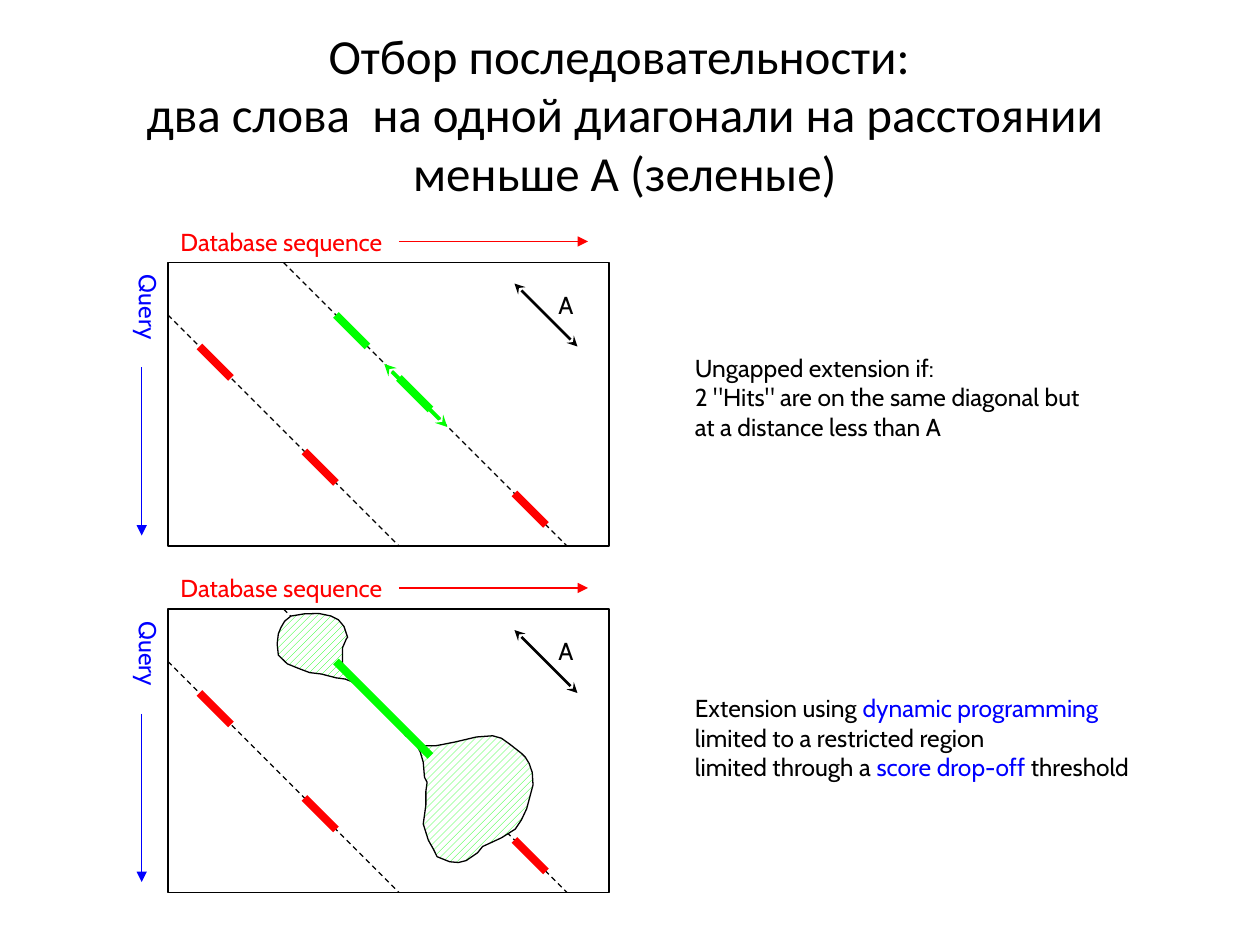
from lxml.etree import SubElement
from pptx import Presentation
from pptx.dml.color import RGBColor
from pptx.enum.dml import MSO_LINE, MSO_PATTERN
from pptx.enum.shapes import MSO_CONNECTOR, MSO_SHAPE
from pptx.enum.text import MSO_ANCHOR, MSO_AUTO_SIZE, PP_ALIGN
from pptx.oxml.ns import qn
from pptx.util import Pt

BLACK = RGBColor(0x00, 0x00, 0x00)
WHITE = RGBColor(0xFF, 0xFF, 0xFF)
RED = RGBColor(0xFF, 0x00, 0x00)
GREEN = RGBColor(0x00, 0xFF, 0x00)
BLUE = RGBColor(0x00, 0x00, 0xFF)

PANEL_LEFT, PANEL_WIDTH, PANEL_HEIGHT = 96, 252, 162
UPPER_TOP, LOWER_TOP = 150, 348
HIT = 18

EXTENSION_REGION = [
    (207.4, 393.1), (200.9, 387.4), (198.7, 383.8), (195.8, 380.2), (195.8, 370.1),
    (198, 365), (198.7, 364.3), (196.6, 358), (193.4, 354.2), (189, 352),
    (182.2, 350.6), (174, 350.8), (166.3, 352.1), (162.7, 355), (160.6, 358.6),
    (159.1, 362.2), (158.4, 368), (159.1, 374.4), (164.2, 379.4), (171.4, 382.3),
    (177, 384.4), (183.6, 385.2), (192.2, 387.4), (197.3, 388.1), (200.9, 389.5),
    (203, 391), (207.4, 395.3), (211, 397.4), (216, 401.8), (218.9, 406.1),
    (223.2, 410.4), (228.2, 414.7), (234.7, 421.9), (237.6, 424.8), (240.2, 429.8),
    (241.9, 435.6), (242.6, 444.2), (244.1, 447.1), (243.4, 452.2), (243.4, 460.1),
    (241.9, 470.9), (244.8, 480.2), (247.7, 485.3), (249.8, 489.6), (257, 492.5),
    (262, 492.9), (266.4, 491.8), (272.9, 487.4), (275.8, 483.8), (286.6, 478.8),
    (294.5, 473.8), (298, 468.5), (301, 462.2), (304.6, 448.6), (304.2, 441.5),
    (302.4, 436.3), (300.2, 432.7), (298.1, 430.6), (291.6, 425.5), (286.6, 421.9),
    (281.5, 420.5), (272.2, 421.2), (259.9, 424.1), (252.7, 425.5), (249.1, 426.2),
    (241.2, 426.2), (237.6, 424.8), (234.7, 421.9), (231.8, 420.5), (226.1, 411.8),
    (221, 407.5), (218.2, 403.9), (212.4, 398.2), (208.8, 395.3),
]


class Board:
    font = "Cabin"
    size = 14

    def __init__(self, slide):
        self.slide = slide
        self.shapes = slide.shapes

    def title(self, lines, left, top, width, height):
        frame = self.shapes.add_textbox(Pt(left), Pt(top), Pt(width), Pt(height)).text_frame
        frame.word_wrap = True
        frame.vertical_anchor = MSO_ANCHOR.MIDDLE
        paragraph = frame.paragraphs[0]
        paragraph.alignment = PP_ALIGN.CENTER
        for index, line in enumerate(lines):
            if index:
                paragraph.add_line_break()
            self.run(paragraph, line, BLACK, "Calibri", 28)

    def run(self, paragraph, words, color, font=font, size=size):
        run = paragraph.add_run()
        run.text = words
        run.font.name = font
        run.font.size = Pt(size)
        run.font.color.rgb = color

    def text(self, paragraphs, left, top, width, height, wrap=False, vertical=False):
        frame = self.shapes.add_textbox(Pt(left), Pt(top), Pt(width), Pt(height)).text_frame
        frame.word_wrap = wrap
        frame.auto_size = MSO_AUTO_SIZE.SHAPE_TO_FIT_TEXT
        if vertical:
            frame._txBody.find(qn("a:bodyPr")).set("vert", "eaVert")
        for index, runs in enumerate(paragraphs):
            paragraph = frame.add_paragraph() if index else frame.paragraphs[0]
            for words, color in runs:
                self.run(paragraph, words, color)

    def box(self, left, top, width, height):
        box = self.shapes.add_shape(MSO_SHAPE.RECTANGLE, Pt(left), Pt(top), Pt(width), Pt(height))
        box.shadow.inherit = False
        box.fill.solid()
        box.fill.fore_color.rgb = WHITE
        box.line.color.rgb = BLACK
        box.line.width = Pt(0.75)

    def line(self, start, end, color, width=0.75, dash=None, head=None, tail=None):
        line = self.shapes.add_connector(MSO_CONNECTOR.STRAIGHT, *map(Pt, start + end))
        line.line.color.rgb = color
        line.line.width = Pt(width)
        if dash:
            line.line.dash_style = dash
        outline = line.line._get_or_add_ln()
        for tag, arrow in (("a:headEnd", head), ("a:tailEnd", tail)):
            if arrow:
                SubElement(outline, qn(tag), type=arrow)
        SubElement(line._element.spPr, qn("a:effectLst"))

    def diagonal(self, left, top, length, color, width, **style):
        self.line((left, top), (left + length, top + length), color, width, **style)

    def region(self, points):
        first, *rest = [(Pt(x), Pt(y)) for x, y in points]
        builder = self.shapes.build_freeform(*first)
        builder.add_line_segments(rest, close=True)
        region = builder.convert_to_shape()
        region.shadow.inherit = False
        region.fill.patterned()
        region.fill.pattern = MSO_PATTERN.WIDE_UPWARD_DIAGONAL
        region.fill.fore_color.rgb = GREEN
        region.fill.back_color.rgb = WHITE
        region.line.color.rgb = BLACK
        region.line.width = Pt(0.75)

    def panel(self, top):
        self.text([[("Database sequence", RED)]], PANEL_LEFT, top - 24, 139, 24)
        self.box(PANEL_LEFT, top, PANEL_WIDTH, PANEL_HEIGHT)
        self.text([[("Query", BLUE)]], 66, top, 31, 45.5, vertical=True)
        self.diagonal(PANEL_LEFT, top + 30, 132, BLACK, 0.75, dash=MSO_LINE.DASH)
        self.diagonal(162, top, PANEL_HEIGHT, BLACK, 0.75, dash=MSO_LINE.DASH)
        for left, drop in ((114, 48), (174, 108), (294, 132)):
            self.diagonal(left, top + drop, HIT, RED, 4.5)
        self.text([[("A", BLACK)]], 312, top + 12, 24, 24)
        self.diagonal(294, top + 12, 36, BLACK, 1.5, head="stealth", tail="stealth")
        self.line((228, top - 12), (336, top - 12), RED, tail="triangle")
        self.line((81, top + 60), (81, top + 156), BLUE, tail="triangle")


def main():
    deck = Presentation()
    deck.slide_width, deck.slide_height = Pt(720), Pt(540)
    board = Board(deck.slides.add_slide(deck.slide_layouts[6]))

    board.title(["Отбор последовательности: ",
                 "два слова  на одной диагонали на расстоянии меньше A (зеленые)"],
                33, 10, 648, 109.5)

    board.panel(UPPER_TOP)
    for left, drop in ((192, 30), (228, 66)):
        board.diagonal(left, UPPER_TOP + drop, HIT, GREEN, 4.5)
    board.diagonal(219.6, 208, 36, GREEN, 2.25, head="stealth", tail="stealth")
    board.text([[("Ungapped extension if:", BLACK)],
                [('2 "Hits" are on the same diagonal but at a distance less than A', BLACK)]],
               390, 198, 247, 57.5, wrap=True)

    board.panel(LOWER_TOP)
    board.region(EXTENSION_REGION)
    board.diagonal(192, LOWER_TOP + 30, 54, GREEN, 4.5)
    board.text([[("Extension using ", BLACK), ("dynamic programming", BLUE)],
                [("limited to a restricted region", BLACK)],
                [("limited through a ", BLACK), ("score drop-off", BLUE), (" threshold", BLACK)]],
               390, 392.5, 264, 74, wrap=True)

    deck.save("out.pptx")


if __name__ == "__main__":
    main()
